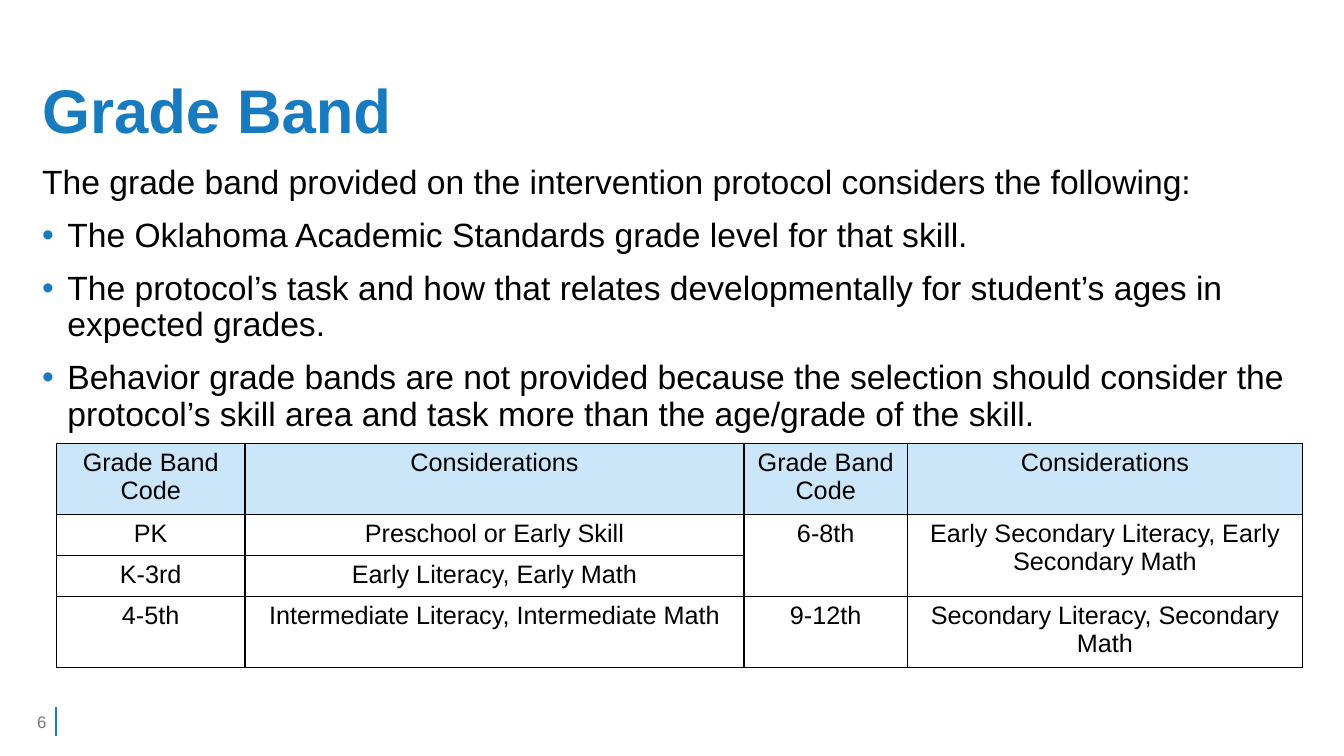
from lxml import etree
from pptx import Presentation
from pptx import util as u
from pptx.dml.color import RGBColor
from pptx.enum import shapes, text
from pptx.oxml import parse_xml
from pptx.oxml.ns import nsdecls, qn

BLUE, BLACK, GRAY, PALE_BLUE = "187BC0", "000000", "787878", "CBE6F8"
LEFT, WIDTH = 0.32, 12.69
RULE_X = 0.56

INTRO = "The grade band provided on the intervention protocol considers the following:"
POINTS = [
    "The Oklahoma Academic Standards grade level for that skill.",
    "The protocol’s task and how that relates developmentally for student’s ages in expected grades.",
    "Behavior grade bands are not provided because the selection should consider "
    "the protocol’s skill area and task more than the age/grade of the skill.",
]
BANDS = [
    ["Grade Band Code", "Considerations"] * 2,
    ["PK", "Preschool or Early Skill", "6-8th", "Early Secondary Literacy, Early Secondary Math"],
    ["K-3rd", "Early Literacy, Early Math", "", ""],
    ["4-5th", "Intermediate Literacy, Intermediate Math", "9-12th", "Secondary Literacy, Secondary Math"],
]
BAND_COLUMNS = [1.87, 4.95, 1.62, 3.92]
ROW_HEIGHT = 0.41


def color(value):
    return RGBColor.from_string(value)


def write(para, words, size=18, fill=BLACK, bold=False, align=None, spacing=None, before=0):
    """Put one formatted run into a paragraph."""
    para.alignment = align
    para.line_spacing = spacing
    para.space_before = u.Pt(before)
    span = para.add_run()
    span.text = words
    span.font.name = "Arial"
    span.font.size = u.Pt(size)
    span.font.bold = bold
    span.font.color.rgb = color(fill)


def add_bullet(para, fill=BLUE, indent=0.25):
    properties = para._p.get_or_add_pPr()
    properties.set("marL", str(u.Inches(indent)))
    properties.set("indent", str(-u.Inches(indent)))
    bullet_color = etree.SubElement(properties, qn("a:buClr"))
    etree.SubElement(bullet_color, qn("a:srgbClr")).set("val", fill)
    etree.SubElement(properties, qn("a:buFont")).set("typeface", "Arial")
    etree.SubElement(properties, qn("a:buChar")).set("char", "•")


def add_borders(cell, fill=BLACK, width=1):
    properties = cell._tc.get_or_add_tcPr()
    for side in ("lnL", "lnR", "lnT", "lnB"):
        properties.append(parse_xml(
            f'<a:{side} {nsdecls("a")} w="{u.Pt(width)}"><a:solidFill>'
            f'<a:srgbClr val="{fill}"/></a:solidFill></a:{side}>'))


class SlideBuilder:
    def __init__(self, deck):
        self.slide = deck.slides.add_slide(deck.slide_layouts[6])

    def text_box(self, left, top, width, height, anchor=text.MSO_ANCHOR.TOP):
        box = self.slide.shapes.add_textbox(*map(u.Inches, (left, top, width, height)))
        frame = box.text_frame
        frame.word_wrap = True
        frame.vertical_anchor = anchor
        return frame

    def line(self, x1, y1, x2, y2, fill=BLUE, width=1.5):
        connector = self.slide.shapes.add_connector(
            shapes.MSO_CONNECTOR.STRAIGHT, *map(u.Inches, (x1, y1, x2, y2)))
        connector.line.color.rgb = color(fill)
        connector.line.width = u.Pt(width)
        etree.SubElement(connector._element.spPr, qn("a:effectLst"))

    def table(self, left, top, height, widths, row_height, rows, merges=()):
        """Draw a bordered table; merges lists pairs of corner cells."""
        frame = self.slide.shapes.add_table(
            len(rows), len(widths), *map(u.Inches, (left, top, sum(widths), height)))
        table = frame.table
        table.first_row = table.horz_banding = False
        for column, width in zip(table.columns, widths):
            column.width = u.Inches(width)
        for row in table.rows:
            row.height = u.Inches(row_height)
        frame.height = u.Inches(height)
        for start, end in merges:
            table.cell(*start).merge(table.cell(*end))
        for r, row in enumerate(rows):
            for c, words in enumerate(row):
                cell = table.cell(r, c)
                add_borders(cell)
                if r == 0:
                    cell.fill.solid()
                    cell.fill.fore_color.rgb = color(PALE_BLUE)
                else:
                    cell.fill.background()
                if words:
                    write(cell.text_frame.paragraphs[0], words, align=text.PP_ALIGN.CENTER)


def main():
    deck = Presentation()
    deck.slide_width, deck.slide_height = u.Inches(13.33), u.Inches(7.5)
    page = SlideBuilder(deck)

    page.line(RULE_X, 7.01, RULE_X, 7.3)
    title = page.text_box(LEFT, 0.4, WIDTH, 1.45, text.MSO_ANCHOR.MIDDLE)
    write(title.paragraphs[0], "Grade Band", size=44, fill=BLUE, bold=True, spacing=0.9)

    body = page.text_box(LEFT, 1.59, WIDTH, 2.81)
    write(body.paragraphs[0], INTRO, size=24, spacing=0.9)
    for point in POINTS:
        para = body.add_paragraph()
        add_bullet(para)
        write(para, point, size=24, spacing=0.9, before=12)

    number = page.text_box(0, 6.96, RULE_X, 0.4, text.MSO_ANCHOR.MIDDLE)
    write(number.paragraphs[0], "6", size=12, fill=GRAY, align=text.PP_ALIGN.RIGHT)

    page.table(RULE_X, 4.4, 2.21, BAND_COLUMNS, ROW_HEIGHT, BANDS,
               merges=[((1, c), (2, c)) for c in (2, 3)])
    deck.save("out.pptx")


if __name__ == "__main__":
    main()
